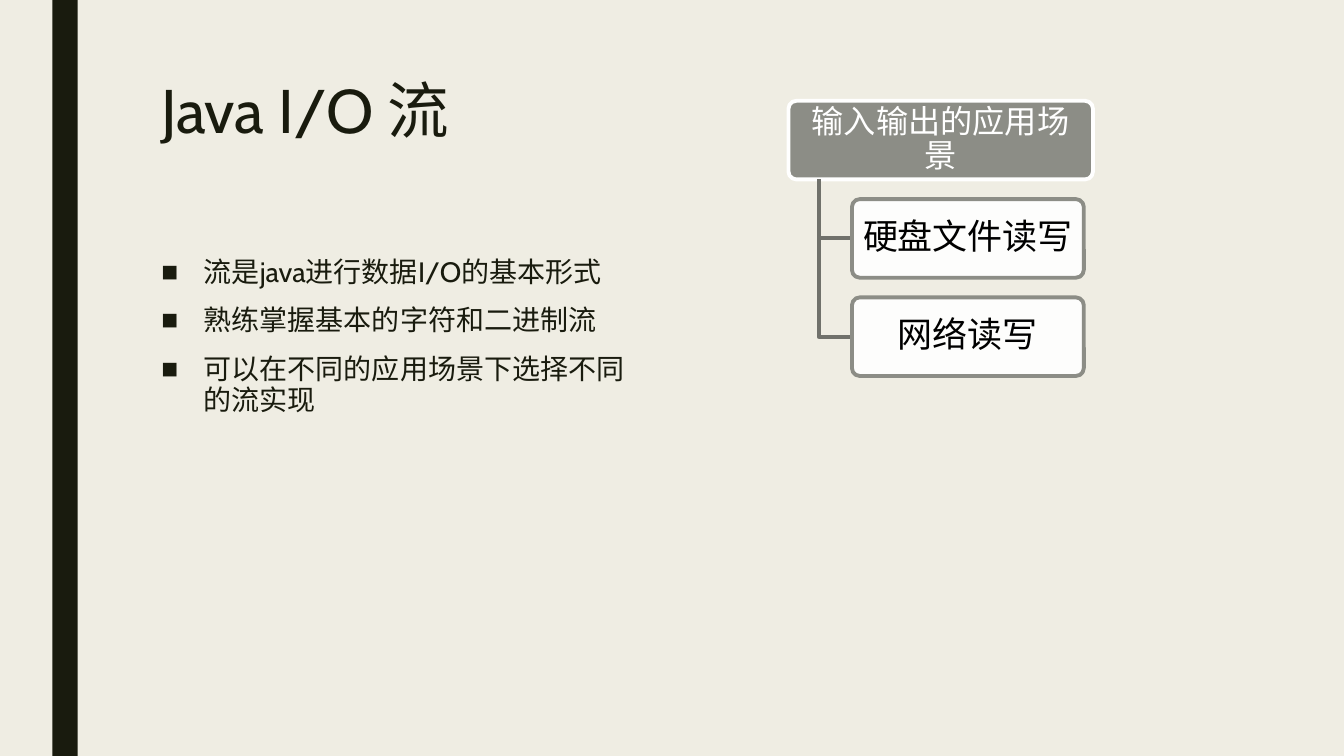
import pptx
import pptx.dml.color
import pptx.enum.shapes
import pptx.enum.text
import pptx.oxml
import pptx.oxml.ns
import pptx.util
from pptx.util import Inches

TITLE = "Java I/O 流"
POINTS = [
    "流是java进行数据I/O的基本形式",
    "熟练掌握基本的字符和二进制流",
    "可以在不同的应用场景下选择不同的流实现",
]
ROOT = "输入输出的应用场景"
CHILDREN = ["硬盘文件读写", "网络读写"]

FONT = "Cabin"
BACKGROUND = pptx.dml.color.RGBColor(0xEF, 0xED, 0xE3)
INK = pptx.dml.color.RGBColor(0x19, 0x1B, 0x0E)
GREY = pptx.dml.color.RGBColor(0x8C, 0x8D, 0x86)
BRANCH = pptx.dml.color.RGBColor(0x70, 0x71, 0x6B)
WHITE = pptx.dml.color.RGBColor(0xFF, 0xFF, 0xFF)
BLACK = pptx.dml.color.RGBColor(0, 0, 0)

ALIGN = pptx.enum.text.PP_ALIGN
ANCHOR = pptx.enum.text.MSO_ANCHOR
PRESET = pptx.enum.shapes.MSO_SHAPE
LINE_WIDTH = pptx.util.Pt(2.75)

ROOT_LEFT, ROOT_TOP, ROOT_WIDTH = 7.82, 1, 3.02
NODE_HEIGHT, NODE_PITCH = 0.78, 0.975
TRUNK_LEFT, CHILD_LEFT, CHILD_WIDTH = 8.12, 8.45, 2.3


def write(shape, lines, *, size, color, align=ALIGN.LEFT, anchor=ANCHOR.TOP,
          spacing=0.9, before=0, after=0, inset=(0.1, 0.05), bullet=None):
    """Fill a shape with formatted paragraphs."""
    frame = shape.text_frame
    frame.word_wrap = True
    frame.auto_size = pptx.enum.text.MSO_AUTO_SIZE.NONE
    frame.vertical_anchor = anchor
    frame.margin_left = frame.margin_right = Inches(inset[0])
    frame.margin_top = frame.margin_bottom = Inches(inset[1])
    frame.text = "\n".join(lines)
    for paragraph in frame.paragraphs:
        paragraph.alignment = align
        paragraph.line_spacing = spacing
        paragraph.space_before = pptx.util.Pt(before)
        paragraph.space_after = pptx.util.Pt(after)
        font = paragraph.runs[0].font
        font.name, font.size, font.color.rgb = FONT, pptx.util.Pt(size), color
        if bullet:
            properties = paragraph.runs[0]._r.getparent().get_or_add_pPr()
            properties.set("marL", str(Inches(0.42)))
            properties.set("indent", str(-Inches(0.42)))
            mark = pptx.oxml.parse_xml(
                f'<a:buChar {pptx.oxml.ns.nsdecls("a")} char="{bullet}"/>')
            properties.append(mark)


def place(shape, left, top, width, height):
    """Move and size a shape, in inches."""
    shape.left, shape.top = Inches(left), Inches(top)
    shape.width, shape.height = Inches(width), Inches(height)


def add_node(slide, text, left, top, width, *, size, color, fill, line, alpha=None):
    """Add one rounded box of the hierarchy."""
    node = slide.shapes.add_shape(
        PRESET.ROUNDED_RECTANGLE, Inches(left), Inches(top),
        Inches(width), Inches(NODE_HEIGHT))
    node.adjustments[0] = 0.1
    node.shadow.inherit = False
    node.fill.solid()
    node.fill.fore_color.rgb = fill
    node.line.color.rgb, node.line.width = line, LINE_WIDTH
    if alpha:
        fill_color = node.fill._xPr.find(".//" + pptx.oxml.ns.qn("a:srgbClr"))
        fill_color.append(pptx.oxml.parse_xml(
            f'<a:alpha {pptx.oxml.ns.nsdecls("a")} val="{alpha * 1000}"/>'))
    write(node, [text], size=size, color=color, align=ALIGN.CENTER,
          anchor=ANCHOR.MIDDLE, inset=(0.07, 0.05))


def add_branch(slide, middle):
    """Add the elbow from the root down to a child's left side."""
    builder = slide.shapes.build_freeform(
        Inches(TRUNK_LEFT), Inches(ROOT_TOP + NODE_HEIGHT))
    builder.add_line_segments(
        [(Inches(TRUNK_LEFT), Inches(middle)), (Inches(CHILD_LEFT), Inches(middle))],
        close=False)
    branch = builder.convert_to_shape()
    branch.shadow.inherit = False
    branch.fill.background()
    branch.line.color.rgb, branch.line.width = BRANCH, LINE_WIDTH


def main():
    """Build the slide and save it."""
    deck = pptx.Presentation()
    deck.slide_width, deck.slide_height = Inches(13.33), Inches(7.5)
    slide = deck.slides.add_slide(deck.slide_layouts[1])
    slide.background.fill.solid()
    slide.background.fill.fore_color.rgb = BACKGROUND

    band = slide.shapes.add_shape(
        PRESET.RECTANGLE, Inches(0.52), 0, Inches(0.25), deck.slide_height)
    band.shadow.inherit = False
    band.fill.solid()
    band.fill.fore_color.rgb = INK
    band.line.fill.background()

    title, body = slide.shapes.title, slide.placeholders[1]
    place(title, 1.5, 0.75, 10.5, 1.62)
    write(title, [TITLE], size=44, color=INK, spacing=0.89)
    place(body, 1.5, 2.5, 4.86, 3.92)
    write(body, POINTS, size=20, color=INK, spacing=0.94,
          before=10, after=2, bullet="■")

    add_node(slide, ROOT, ROOT_LEFT, ROOT_TOP, ROOT_WIDTH,
             size=23, color=WHITE, fill=GREY, line=WHITE)
    for level, child in enumerate(CHILDREN, start=1):
        top = ROOT_TOP + level * NODE_PITCH
        add_branch(slide, top + NODE_HEIGHT / 2)
        add_node(slide, child, CHILD_LEFT, top, CHILD_WIDTH,
                 size=25, color=BLACK, fill=WHITE, line=GREY, alpha=90)

    deck.save("out.pptx")


if __name__ == "__main__":
    main()
